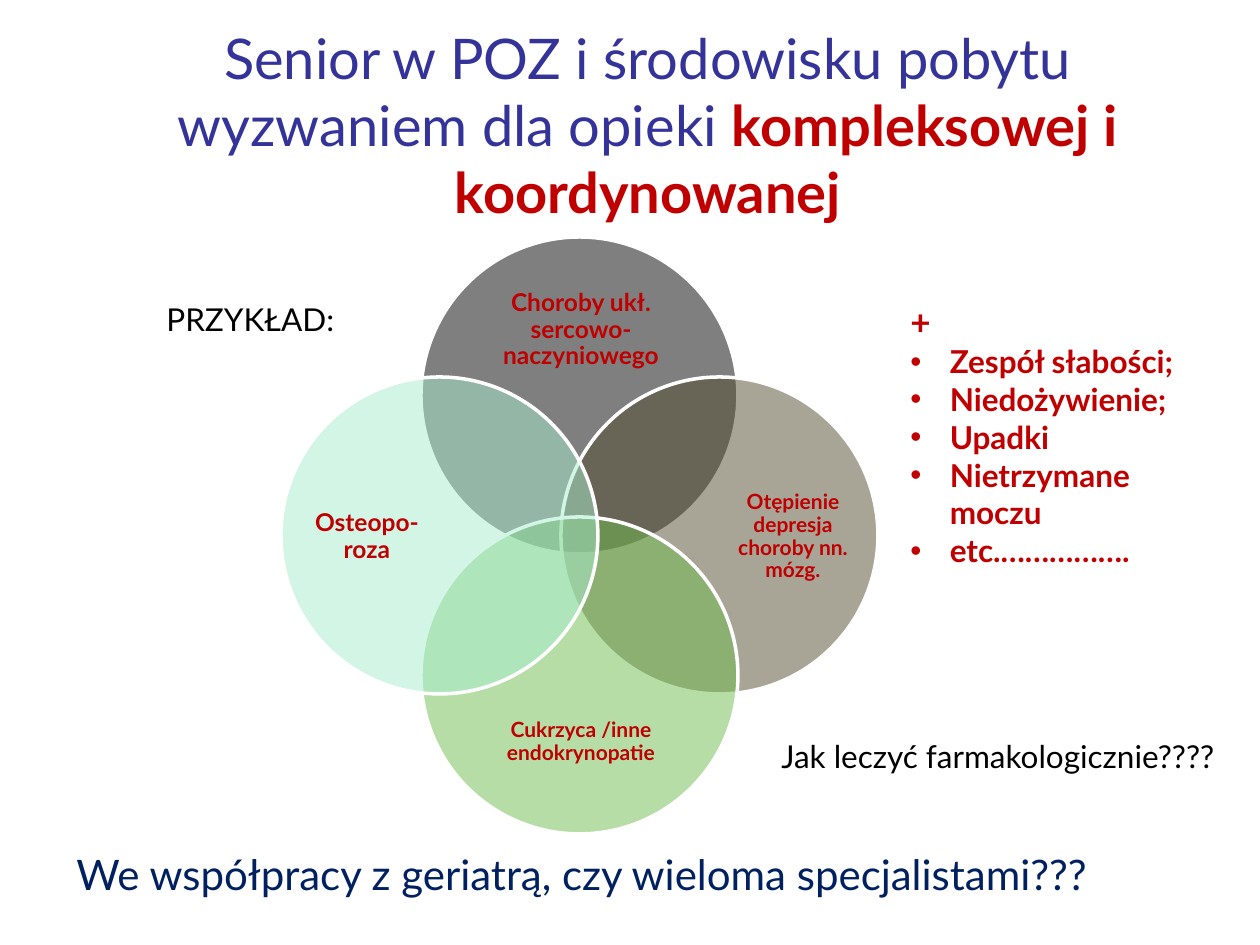
import pptx
import pptx.util
import pptx.dml.color
import pptx.enum.shapes
import pptx.enum.text
import pptx.oxml.ns
from lxml import etree

RGB = pptx.dml.color.RGBColor
ALIGN = pptx.enum.text.PP_ALIGN
ANCHOR = pptx.enum.text.MSO_ANCHOR
qn = pptx.oxml.ns.qn

PX = 914400 // 126
FONT = "Lato"
WHITE = RGB(0xFF, 0xFF, 0xFF)
BLACK = RGB(0x00, 0x00, 0x00)
INDIGO = RGB(0x33, 0x33, 0x99)
NAVY = RGB(0x00, 0x20, 0x60)
RED = RGB(0xC0, 0x00, 0x00)
BROWN = RGB(0x53, 0x4A, 0x2F)
GREEN = RGB(0x6F, 0xBD, 0x4F)
MINT = RGB(0xA9, 0xED, 0xCF)


def px(*lengths):
    return [length * PX for length in lengths]


def set_font(paragraph, size, color, bold=False):
    font = paragraph.font
    font.name, font.size, font.bold = FONT, pptx.util.Pt(size), bold
    font.color.rgb = color


def add_text(slide, box, text, size, color, bold=False):
    frame = slide.shapes.add_textbox(*px(*box)).text_frame
    frame.word_wrap = True
    paragraph = frame.paragraphs[0]
    paragraph.text = text
    set_font(paragraph, size, color, bold)
    return frame


def add_title(slide, box):
    frame = add_text(slide, box, "Senior w POZ i środowisku pobytu wyzwaniem dla opieki ",
                     32, INDIGO)
    frame.vertical_anchor = ANCHOR.BOTTOM
    paragraph = frame.paragraphs[0]
    paragraph.alignment = ALIGN.CENTER
    emphasis = paragraph.add_run()
    emphasis.text = "kompleksowej i koordynowanej"
    emphasis.font.bold = True
    emphasis.font.color.rgb = RED


def add_disease_circle(slide, box, color):
    circle = slide.shapes.add_shape(pptx.enum.shapes.MSO_SHAPE.OVAL, *px(*box))
    circle.shadow.inherit = False
    circle.fill.solid()
    circle.fill.fore_color.rgb = color
    tint = circle.fill._xPr.find(qn("a:solidFill"))[0]
    etree.SubElement(tint, qn("a:alpha"), val="50000")
    circle.line.color.rgb = WHITE
    circle.line.width = pptx.util.Pt(2)


def add_disease_label(slide, box, text, size):
    frame = add_text(slide, box, text, size, RED, True)
    frame.margin_left = frame.margin_right = frame.margin_top = frame.margin_bottom = 0
    frame.vertical_anchor = ANCHOR.MIDDLE
    frame.paragraphs[0].alignment = ALIGN.CENTER
    frame.paragraphs[0].line_spacing = 0.9


def add_venn(slide, box):
    left, top, side = box
    diameter = 317
    step = (side - diameter) // 2
    wide, tall = (244, 101), (122, 244)
    # Column and row of the circle, colour, label offset in the venn, label size
    diseases = [
        (1, 0, BLACK, (178, 43), wide, "Choroby ukł. sercowo-naczyniowego", 14),
        (2, 1, BROWN, (451, 178), tall, "Otępienie depresja choroby nn. mózg.", 12),
        (1, 2, GREEN, (178, 455), wide, "Cukrzyca /inne endokrynopatie", 12),
        (0, 1, MINT, (25, 178), tall, "Osteopo-roza", 14),
    ]
    for column, row, color, (dx, dy), label_size, text, size in diseases:
        add_disease_circle(slide, (left + column * step, top + row * step,
                                   diameter, diameter), color)
        add_disease_label(slide, (left + dx, top + dy, *label_size), text, size)


def add_syndromes(slide, box):
    frame = add_text(slide, box, "+", 20, RED, True)
    for syndrome in ("Zespół słabości;", "Niedożywienie;", "Upadki",
                     "Nietrzymane moczu", "etc.……………."):
        paragraph = frame.add_paragraph()
        paragraph.text = syndrome
        set_font(paragraph, 18, RED, True)
        properties = paragraph._p.get_or_add_pPr()
        properties.set("marL", "285750")
        properties.set("indent", "-285750")
        bullet_font = etree.Element(qn("a:buFont"), typeface="Arial")
        bullet = etree.Element(qn("a:buChar"), char="•")
        properties.insert(0, bullet_font)
        properties.insert(1, bullet)


def main():
    deck = pptx.Presentation()
    deck.slide_width, deck.slide_height = px(1260, 945)
    slide = deck.slides.add_slide(deck.slide_layouts[6])

    # Title and diagram
    add_title(slide, (64, 29, 1168, 202))
    add_venn(slide, (281, 237, 598))

    # Remarks around the diagram
    add_text(slide, (154, 294, 307, 50), "PRZYKŁAD:", 18, BLACK)
    add_text(slide, (64, 842, 1062, 63),
             "We współpracy z geriatrą, czy wieloma specjalistami???", 24, NAVY)
    add_syndromes(slide, (898, 294, 335, 323))
    add_text(slide, (769, 731, 476, 50), "Jak leczyć farmakologicznie????", 18, BLACK)

    deck.save("out.pptx")


if __name__ == "__main__":
    main()
